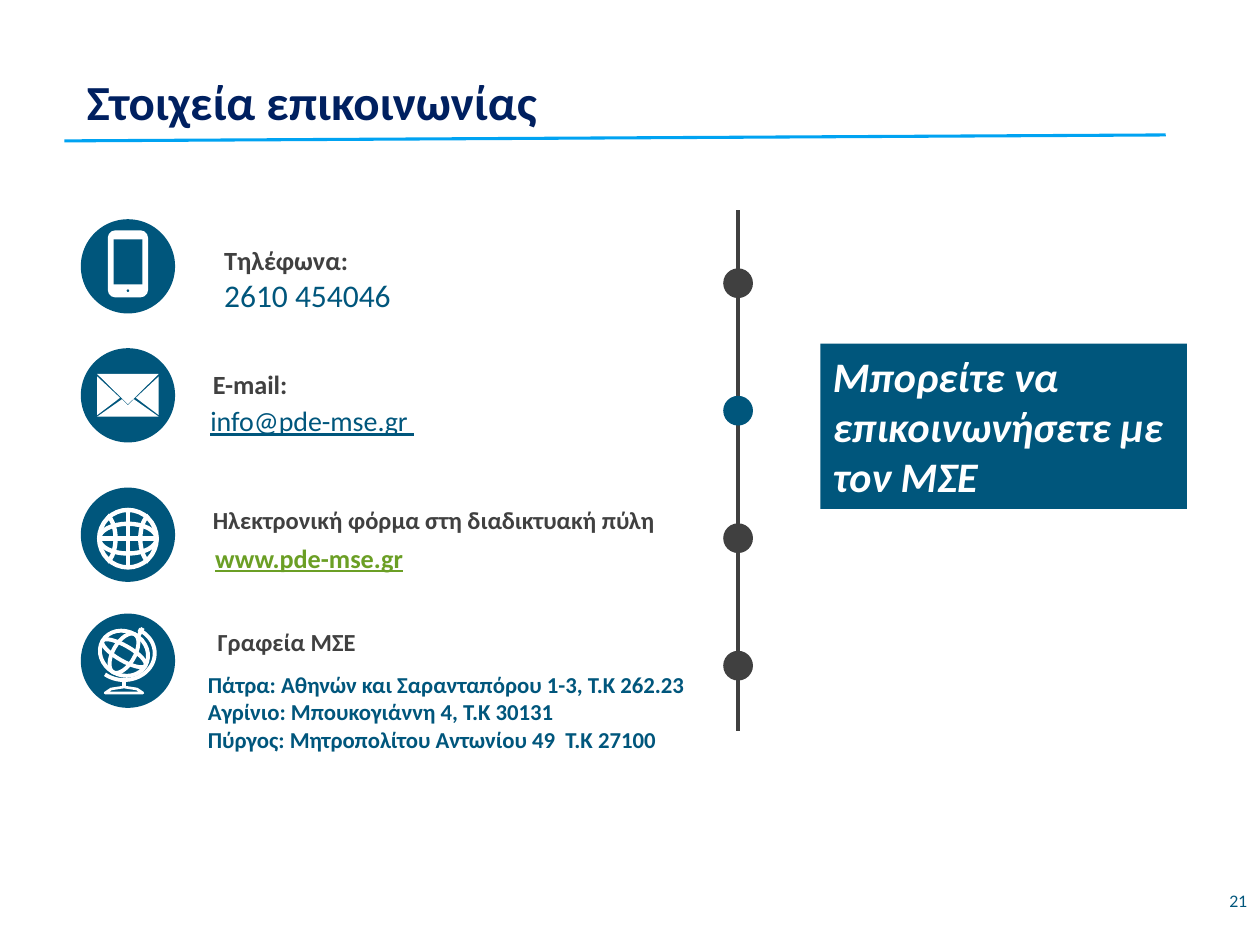
from math import cos, pi, sin

from lxml.etree import SubElement
from pptx import Presentation
from pptx.dml.color import RGBColor
from pptx.enum.shapes import MSO_CONNECTOR, MSO_SHAPE
from pptx.enum.text import MSO_ANCHOR, PP_ALIGN
from pptx.oxml.ns import qn
from pptx.util import Cm, Pt

TEAL, DARK, WHITE = "00567C", "404040", "FFFFFF"
NAVY, SKY, GREEN = "002060", "00A3F2", "6B9F25"

# left, top, width, height, side inset, [(text, size, colour, styles)]
TEXTS = [
    (1.5, 1.32, 16, 1.45, 0.25, [("Στοιχεία επικοινωνίας", 28, NAVY, "b")]),
    (4.22, 4.8, 9.53, 1.68, 0.3, [("Τηλέφωνα:", 15, DARK, "b"),
                                  ("2610 454046", 18, TEAL, "")]),
    (3.99, 8, 9.53, 0.94, 0.25, [("info@pde-mse.gr ", 16, TEAL, "u")]),
    (3.99, 7.29, 9.53, 0.89, 0.3, [("E-mail:", 15, DARK, "b")]),
    (4.09, 10.8, 9.53, 0.89, 0.25, [("www.pde-mse.gr", 15, GREEN, "bu")]),
    (3.99, 10.06, 9.53, 0.86, 0.3,
     [("Ηλεκτρονική φόρμα στη διαδικτυακή πύλη", 14, DARK, "b")]),
    (4.09, 12.52, 9.53, 0.86, 0.3, [("Γραφεία MΣΕ", 14, DARK, "b")]),
    (3.94, 13.39, 12.7, 1.93, 0.25,
     [("Πάτρα: Αθηνών και Σαρανταπόρου 1-3, Τ.Κ 262.23", 13, TEAL, "b"),
      ("Αγρίνιο: Μπουκογιάννη 4, Τ.Κ 30131", 13, TEAL, "b"),
      ("Πύργος: Μητροπολίτου Αντωνίου 49  Τ.Κ 27100", 13, TEAL, "b")]),
]
CALLOUT = [("Μπορείτε να επικοινωνήσετε με τον ΜΣΕ", 24, WHITE, "bi")]
PAGE = [("21", 9, TEAL, "")]

ICON_X, ICON_SIZE = 2.58, 1.9
PHONE_Y, MAIL_Y, WEB_Y, OFFICE_Y = 5.37, 7.97, 10.78, 13.32
AXIS_X, DOT_SIZE, DOT_TOP, DOT_STEP = 14.88, 0.6, 5.41, 2.57
DOT_COLOURS = [DARK, TEAL, DARK, DARK]
ENVELOPE = [
    [(-0.62, -0.43), (0.62, -0.43), (0, 0.18)],
    [(-0.62, -0.38), (-0.16, 0.05), (-0.62, 0.4)],
    [(0.62, -0.38), (0.16, 0.05), (0.62, 0.4)],
    [(-0.12, 0.08), (0, 0.2), (0.12, 0.08), (0.62, 0.43), (-0.62, 0.43)],
]

prs = Presentation()
prs.slide_width, prs.slide_height = Cm(25.4), Cm(19.05)
shapes = prs.slides.add_slide(prs.slide_layouts[6]).shapes


def rgb(value):
    return RGBColor.from_string(value)


def paint(sp, fill=None, line=None, width=1.5):
    sp.shadow.inherit = False
    if fill:
        sp.fill.solid()
        sp.fill.fore_color.rgb = rgb(fill)
    else:
        sp.fill.background()
    if line:
        sp.line.color.rgb = rgb(line)
        sp.line.width = Pt(width)
    else:
        sp.line.fill.background()


def add_shape(kind, x, y, w, h, fill=None, line=None, width=1.5):
    sp = shapes.add_shape(kind, Cm(x), Cm(y), Cm(w), Cm(h))
    paint(sp, fill, line, width)
    return sp


def centred(kind, x, y, w, h, *style):
    return add_shape(kind, x - w / 2, y - h / 2, w, h, *style)


def add_line(x1, y1, x2, y2, colour, width):
    cx = shapes.add_connector(MSO_CONNECTOR.STRAIGHT, Cm(x1), Cm(y1), Cm(x2), Cm(y2))
    cx.line.color.rgb = rgb(colour)
    cx.line.width = Pt(width)
    SubElement(cx.line._get_or_add_ln(), qn("a:round"))
    SubElement(cx._element.spPr, qn("a:effectLst"))


def add_outline(x, y, contours, closed, *style):
    points = [[(Cm(x + dx), Cm(y + dy)) for dx, dy in c] for c in contours]
    fb = shapes.build_freeform(*points[0][0])
    for i, c in enumerate(points):
        if i:
            fb.move_to(*c[0])
        fb.add_line_segments(c[1:], close=closed)
    paint(fb.convert_to_shape(), *style)


def arc(cx, cy, rx, ry, start=0, end=360, tilt=0, steps=32):
    t = tilt * pi / 180
    points = []
    for i in range(steps + 1):
        a = (start + (end - start) * i / steps) * pi / 180
        u, v = rx * cos(a), ry * sin(a)
        points.append((cx + u * cos(t) - v * sin(t), cy + u * sin(t) + v * cos(t)))
    return points


def fill_text(sp, lines, inset=0.25, align=PP_ALIGN.LEFT, anchor=MSO_ANCHOR.TOP,
              font="Calibri"):
    tf = sp.text_frame
    tf.word_wrap = True
    tf.vertical_anchor = anchor
    tf.margin_left = tf.margin_right = Cm(inset)
    tf.margin_top = tf.margin_bottom = Cm(0.13)
    for i, (text, size, colour, styles) in enumerate(lines):
        p = tf.add_paragraph() if i else tf.paragraphs[0]
        p.alignment = align
        p.add_run().text = text
        f = p.font
        f.name, f.size, f.color.rgb = font, Pt(size), rgb(colour)
        f.bold, f.italic, f.underline = "b" in styles, "i" in styles, "u" in styles


def add_text(x, y, w, h, lines, **options):
    fill_text(shapes.add_textbox(Cm(x), Cm(y), Cm(w), Cm(h)), lines, **options)


add_line(1.3, 2.84, 23.5, 2.72, SKY, 1.75)
add_text(19.69, 17.65, 5.71, 1.02, PAGE, align=PP_ALIGN.RIGHT,
         anchor=MSO_ANCHOR.MIDDLE, font="Lato")

add_line(AXIS_X, 4.24, AXIS_X, 14.73, DARK, 2)
for i, colour in enumerate(DOT_COLOURS):
    add_shape(MSO_SHAPE.FLOWCHART_CONNECTOR, AXIS_X - DOT_SIZE / 2,
              DOT_TOP + i * DOT_STEP, DOT_SIZE, DOT_SIZE, colour)

callout = add_shape(MSO_SHAPE.RECTANGLE, 16.54, 6.93, 7.39, 3.33, TEAL)
fill_text(callout, CALLOUT)

for y in (PHONE_Y, MAIL_Y, WEB_Y, OFFICE_Y):
    centred(MSO_SHAPE.OVAL, ICON_X, y, ICON_SIZE, ICON_SIZE, TEAL)

body = centred(MSO_SHAPE.ROUNDED_RECTANGLE, ICON_X, PHONE_Y - 0.05, 0.76, 1.3, WHITE, WHITE)
body.adjustments[0] = 0.17
centred(MSO_SHAPE.RECTANGLE, ICON_X, PHONE_Y - 0.09, 0.58, 0.91, TEAL)
centred(MSO_SHAPE.OVAL, ICON_X, PHONE_Y + 0.49, 0.05, 0.05, TEAL)

add_outline(ICON_X, MAIL_Y, ENVELOPE, True, WHITE)

web_grid = [
    arc(0, 0, 0.58, 0.58),
    arc(0, 0, 0.58, 0.3),
    [(-0.58, 0), (0.58, 0)],
    [(0, -0.58), (0, 0.58)],
    arc(-0.5, 0, 0.25, 0.5, -70, 70),
    arc(0.5, 0, 0.25, 0.5, 110, 250),
]
add_outline(ICON_X, WEB_Y + 0.08, web_grid, False, None, WHITE, 2.5)

desk_globe = [arc(-0.08, -0.15, rx, ry, tilt=-60)
              for rx, ry in ((0.44, 0.5), (0.44, 0.22), (0.15, 0.5))]
desk_globe += [
    arc(-0.08, -0.15, 0.62, 0.54, -62, 128),
    [(0.2, -0.48), (0.3, -0.66)],
    [(-0.08, 0.39), (-0.08, 0.56)],
]
add_outline(ICON_X, OFFICE_Y, desk_globe, False, None, WHITE, 2.25)
stand = [(-0.46, 0.65), (-0.34, 0.57), (-0.08, 0.53), (0.18, 0.57), (0.3, 0.65)]
add_outline(ICON_X, OFFICE_Y, [stand], True, TEAL, WHITE)

for x, y, w, h, inset, lines in TEXTS:
    add_text(x, y, w, h, lines, inset=inset)

prs.save("out.pptx")
